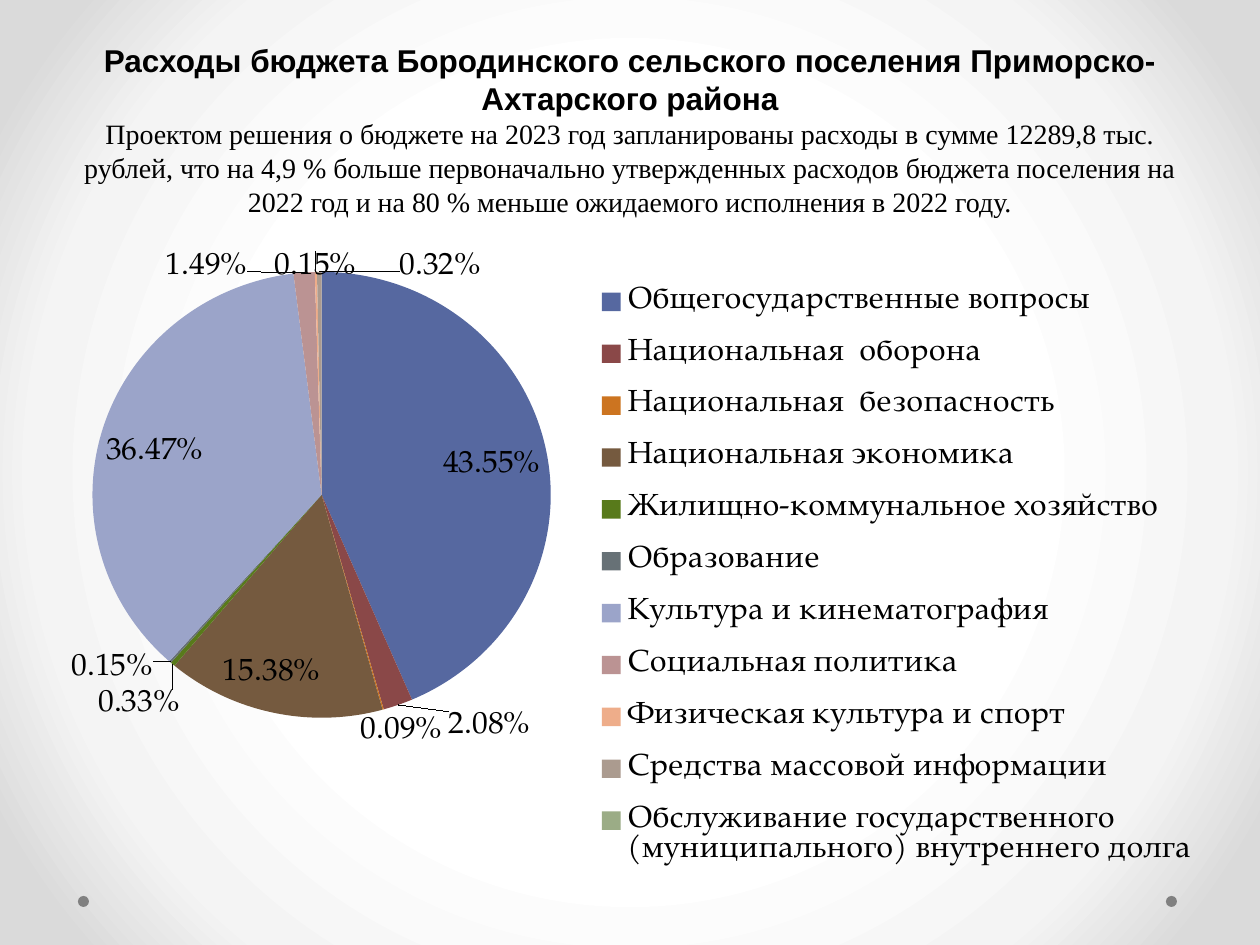
from dataclasses import dataclass

from lxml.etree import SubElement
from pptx import Presentation
from pptx.chart.data import CategoryChartData
from pptx.dml.color import RGBColor as RGB
from pptx.enum.chart import XL_CHART_TYPE as CT, XL_LABEL_POSITION as LP, XL_LEGEND_POSITION as LG
from pptx.enum.shapes import MSO_SHAPE as SHAPE
from pptx.enum.text import MSO_ANCHOR as ANCHOR, PP_ALIGN as ALIGN
from pptx.oxml import parse_xml
from pptx.oxml.ns import qn
from pptx.util import Pt

PX = 914400 // 126


@dataclass(frozen=True)
class Theme:
    text: str = "000000"
    dot: str = "808080"
    title: tuple = ("Arial", 18, True)
    body: tuple = ("Times New Roman", 16, False)
    chart: tuple = ("TeX Gyre Pagella", 18, False)
    backdrop: tuple = ((0, "FFFFFF"), (50, "FFFFFF"), (76, "F4F4F4"), (92, "DADADA"), (100, "DADADA"))


THEME = Theme()
HEADING = (
    ("Расходы бюджета Бородинского сельского поселения Приморско-Ахтарского района", THEME.title),
    ("Проектом решения о бюджете на 2023 год запланированы расходы в сумме 12289,8 тыс. рублей, "
     "что на 4,9 % больше первоначально утвержденных расходов бюджета поселения на 2022 год "
     "и на 80 % меньше ожидаемого исполнения в 2022 году.", THEME.body),
)
# category, percent, slice colour
EXPENSES = (
    ("Общегосударственные вопросы", 43.55, "5668A0"),
    ("Национальная  оборона", 2.08, "8A4848"),
    ("Национальная  безопасность", 0.09, "CC7420"),
    ("Национальная экономика", 15.38, "755A3F"),
    ("Жилищно-коммунальное хозяйство", 0.33, "587A1B"),
    ("Образование", 0.15, "677176"),
    ("Культура и кинематография", 36.47, "9BA4C9"),
    ("Социальная политика", 1.49, "BB9393"),
    ("Физическая культура и спорт", 0.15, "EEAD8A"),
    ("Средства массовой информации", 0.32, "AB9B8F"),
    ("Обслуживание государственного (муниципального) внутреннего долга", 0, "9BAC86"),
)
# label shifts as fractions of the chart, by slice index
LABEL_SHIFTS = {1: (0.04, 0), 2: (-0.02, 0), 4: (0.01, 0.03), 5: (-0.01, -0.02),
                7: (-0.08, 0.01), 8: (0, -0.02), 9: (0.1, 0.01)}


def box(*lengths):
    return [n * PX for n in lengths]


def style(font, face):
    name, size, bold = face
    for key, value in dict(name=name, size=Pt(size), bold=bold).items():
        setattr(font, key, value)
    font.color.rgb = RGB.from_string(THEME.text)


def add_backdrop(s):
    """Radial gradient from the centre of the slide."""
    s.background.fill.gradient()
    grad = s.background._cSld.find(".//" + qn("a:gradFill"))
    for child in list(grad):
        grad.remove(child)
    stops = SubElement(grad, qn("a:gsLst"))
    for pos, color in THEME.backdrop:
        gs = SubElement(stops, qn("a:gs"), pos=str(pos * 1000))
        SubElement(gs, qn("a:srgbClr"), val=color)
    way = SubElement(grad, qn("a:path"), path="circle")
    SubElement(way, qn("a:fillToRect"), {side: "50000" for side in "ltrb"})


def add_dot(s, x, y, size):
    sp = s.shapes.add_shape(SHAPE.OVAL, *box(x, y, size, size))
    sp.shadow.inherit = False
    sp.fill.solid()
    sp.fill.fore_color.rgb = RGB.from_string(THEME.dot)
    sp.line.fill.background()


def add_heading(s, parts, *area):
    tf = s.shapes.add_textbox(*box(*area)).text_frame
    tf.word_wrap, tf.vertical_anchor = True, ANCHOR.BOTTOM
    for i, (text, face) in enumerate(parts):
        p = tf.paragraphs[0] if i == 0 else tf.add_paragraph()
        p.alignment = ALIGN.CENTER
        r = p.add_run()
        r.text = text
        style(r.font, face)


def chart_element(tag):
    return parse_xml(f'<c:{tag} xmlns:c="http://schemas.openxmlformats.org/drawingml/2006/chart"/>')


def manual_layout(x, y, w=None, h=None, inner=False):
    """Chart layout in fractions; without a size it is a shift."""
    layout = chart_element("layout")
    manual = SubElement(layout, qn("c:manualLayout"))
    values = dict(x=x, y=y)
    if inner:
        SubElement(manual, qn("c:layoutTarget"), val="inner")
    if w is not None:
        values = dict(xMode="edge", yMode="edge", x=x, y=y, w=w, h=h)
    for tag, value in values.items():
        SubElement(manual, qn("c:" + tag), val=str(value))
    return layout


def set_layout(parent, layout, after=None):
    for old in parent.findall(qn("c:layout")):
        parent.remove(old)
    if after is None:
        parent.insert(0, layout)
    else:
        parent.find(qn(after)).addnext(layout)


def label_slices(plot):
    """Percent labels, shifted where they would collide; the empty slice has none."""
    series = plot.series[0]
    plot.has_data_labels = True
    labels = plot.data_labels
    for key, value in dict(show_percentage=True, show_value=False, number_format="0.00%",
                           number_format_is_linked=False, position=LP.BEST_FIT).items():
        setattr(labels, key, value)
    style(labels.font, THEME.chart)
    group = labels._element
    for old in group.findall(qn("c:showLeaderLines")):
        group.remove(old)
    SubElement(group, qn("c:showLeaderLines"), val="1")
    flags = dict(showLegendKey=0, showVal=0, showCatName=0, showSerName=0, showPercent=1, showBubbleSize=0)
    empty = len(EXPENSES) - 1
    for n, i in enumerate((*LABEL_SHIFTS, empty)):
        label = chart_element("dLbl")
        SubElement(label, qn("c:idx"), val=str(i))
        if i == empty:
            SubElement(label, qn("c:delete"), val="1")
        else:
            label.append(manual_layout(*LABEL_SHIFTS[i]))
            SubElement(label, qn("c:dLblPos"), val="bestFit")
            for tag, value in flags.items():
                SubElement(label, qn("c:" + tag), val=str(value))
        group.insert(n, label)
    # single-slice labels belong to the series
    series._element.find(qn("c:cat")).addprevious(group)


def add_pie(s, rows, *area):
    names, values, colors = zip(*rows)
    data = CategoryChartData()
    data.categories = names
    data.add_series("Series 1", values)
    chart = s.shapes.add_chart(CT.PIE, *box(*area), data).chart
    style(chart.font, THEME.chart)
    chart.has_title = False
    chart.has_legend = True
    chart.legend.position, chart.legend.include_in_layout = LG.RIGHT, False
    style(chart.legend.font, THEME.chart)
    plot = chart.plots[0]
    plot.vary_by_categories = True
    for i, color in enumerate(colors):
        fill = plot.series[0].points[i].format.fill
        fill.solid()
        fill.fore_color.rgb = RGB.from_string(color)
    label_slices(plot)
    set_layout(chart._chartSpace.chart.plotArea, manual_layout(0.02, 0.03, 0.45, 0.68, inner=True))
    set_layout(chart.legend._element, manual_layout(0.46, 0.02, 0.52, 0.95), after="c:legendPos")


def main():
    prs = Presentation()
    prs.slide_width, prs.slide_height = box(1260, 945)
    s = prs.slides.add_slide(prs.slide_layouts[6])
    add_backdrop(s)
    for x in (1166, 78):
        add_dot(s, x, 896, 11)
    add_heading(s, HEADING, 63, 0, 1134, 224)
    add_pie(s, EXPENSES, 25, 234, 1211, 674)
    prs.save("out.pptx")


if __name__ == "__main__":
    main()
